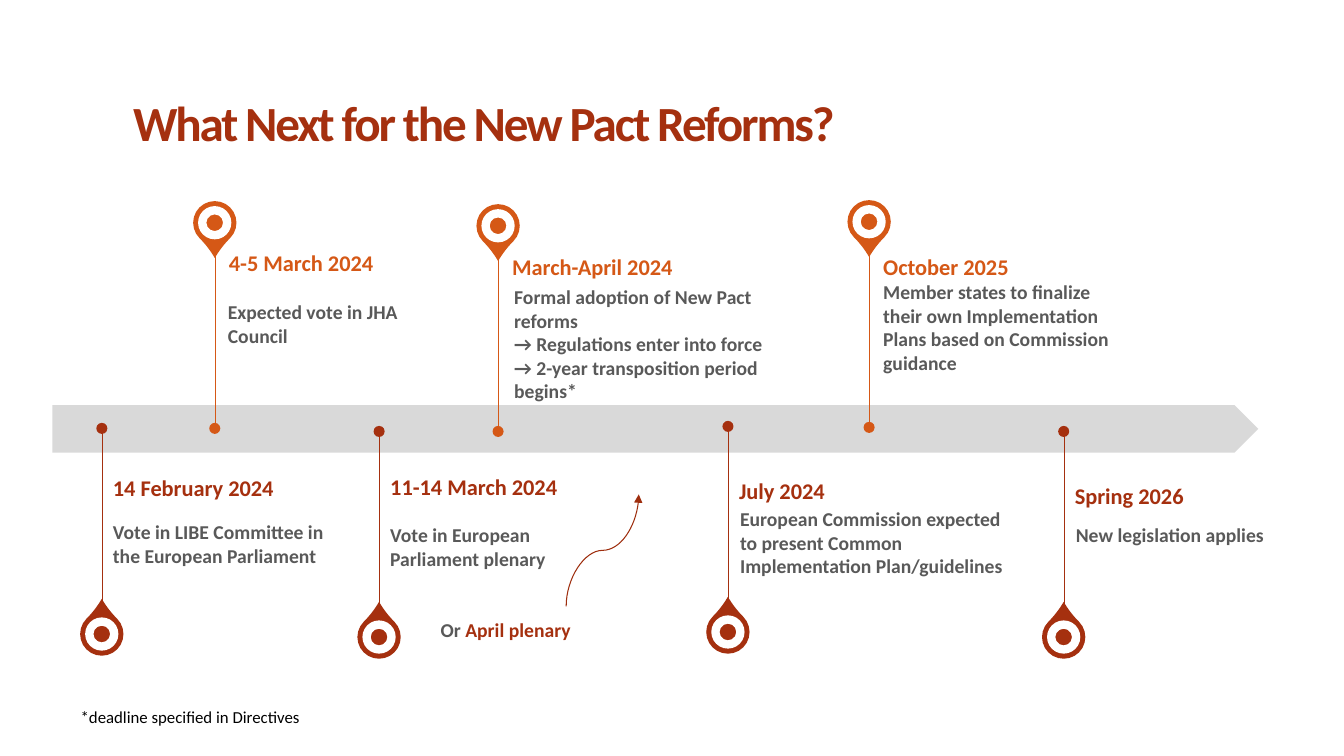
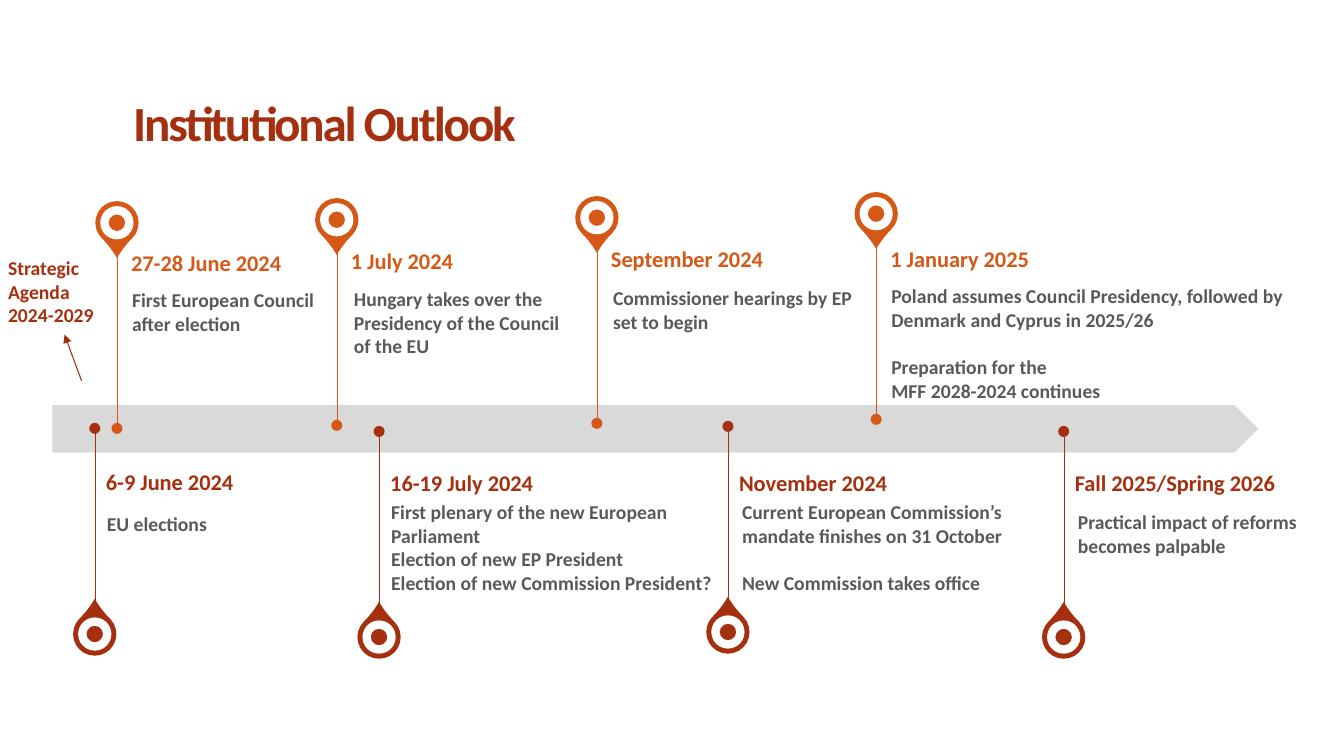
from lxml.etree import SubElement
from pptx import Presentation
from pptx.dml.color import RGBColor
from pptx.enum.shapes import MSO_CONNECTOR, MSO_SHAPE
from pptx.enum.text import MSO_ANCHOR, MSO_AUTO_SIZE, PP_ALIGN
from pptx.oxml.ns import qn
from pptx.util import Emu, Pt

PX = 9144
FONT = "Calibri"
COLOURS = {
    "rust": "A5300F",
    "orange": "D55816",
    "arrow": "9E2E0E",
    "band": "D9D9D9",
    "body": "595959",
    "white": "FFFFFF",
    "black": "000000",
}
TITLE_BOX = (122, 96, 832, 87)
BAND_BOX = (52, 402, 1196, 47)
STEM = 174
HEAD_DISTANCE = 204
HEAD, RING, DOT = 43, 33, 11
DATE_SIZE, BODY_SIZE = 16, 14
BLOCK_GAP = 17
SIDES = {
    "above": {"colour": "orange", "direction": -1, "rotation": 135, "date_offset": 14},
    "below": {"colour": "rust", "direction": 1, "rotation": 315, "date_offset": 11},
}

# side, stem x, dot y, date, date y, body box, blocks of paragraphs
SLIDES = [
    {
        "title": "What Next for the New Pact Reforms?",
        "events": [
            ("above", 213, 425, "4-5 March 2024", 247, (226, 298, 222, 47),
             [["Expected vote in JHA Council"]]),
            ("above", 494, 428, "March-April 2024", 251, (510, 283, 259, 141),
             [["Formal adoption of New Pact reforms",
               "→ Regulations enter into force",
               "→ 2-year transposition period begins*"]]),
            ("above", 862, 424, "October 2025", 251, (876, 278, 243, 94),
             [["Member states to finalize their own Implementation Plans "
               "based on Commission guidance"]]),
            ("below", 376, 428, "11-14 March 2024", 469, (387, 519, 222, 47),
             [["Vote in European Parliament plenary"]]),
            ("below", 722, 423, "July 2024", 473, (734, 503, 262, 71),
             [["European Commission expected to present Common "
               "Implementation Plan/guidelines"]]),
            ("below", 101, 425, "14 February 2024", 470, (112, 516, 222, 47),
             [["Vote in LIBE Committee in the European Parliament"]]),
            ("below", 1055, 428, "Spring 2026", 478, (1067, 519, 222, 24),
             [["New legislation applies"]]),
        ],
        "remarks": [
            ((437, 613, 172, 24), 14, True, [("Or ", "body"), ("April plenary", "rust")]),
            ((80, 701, 240, 20), 12, False, [("*deadline specified in Directives", "black")]),
        ],
        "arrow": (MSO_CONNECTOR.CURVE, (653, 582), (542, 510), 90),
    },
    {
        "title": "Institutional Outlook",
        "events": [
            ("above", 116, 425, "27-28 June 2024", 247, (131, 286, 222, 47),
             [["First European Council after election"]]),
            ("above", 592, 420, "September 2024", 243, (608, 284, 259, 47),
             [["Commissioner hearings by EP set to begin"]]),
            ("above", 869, 416, "1 January 2025", 243, (884, 282, 418, 118),
             [["Poland assumes Council Presidency, followed by Denmark "
               "and Cyprus in 2025/26"],
              ["Preparation for the", "MFF 2028-2024 continues"]]),
            ("below", 376, 428, "16-19 July 2024", 465, (388, 496, 332, 94),
             [["First plenary of the new European Parliament",
               "Election of new EP President",
               "Election of new Commission President?"]]),
            ("below", 722, 423, "November 2024", 465, (736, 496, 278, 94),
             [["Current European Commission’s mandate finishes on 31 October"],
              ["New Commission takes office"]]),
            ("below", 94, 425, "6-9 June 2024", 464, (106, 508, 222, 24),
             [["EU elections"]]),
            ("below", 1055, 428, "Fall 2025/Spring 2026", 465, (1069, 506, 222, 47),
             [["Practical impact of reforms becomes palpable"]]),
            ("above", 334, 422, "1 July 2024", 245, (351, 285, 259, 71),
             [["Hungary takes over the Presidency of the Council", "of the EU"]]),
        ],
        "remarks": [
            ((8, 254, 109, 71), 14, True, [("Strategic Agenda 2024-2029", "rust")]),
        ],
        "arrow": (MSO_CONNECTOR.STRAIGHT, (81, 378), (64, 332), 0),
    },
]


def emu(lengths):
    return [Emu(round(length * PX)) for length in lengths]


def rgb(name):
    return RGBColor.from_string(COLOURS[name])


def add_run(paragraph, words, size, colour, bold=True):
    run = paragraph.add_run()
    run.text = words
    run.font.name = FONT
    run.font.size = Pt(size)
    run.font.bold = bold
    run.font.color.rgb = rgb(colour)
    return run


def add_text(shapes, box, blocks, size, bold=True):
    frame = shapes.add_textbox(*emu(box)).text_frame
    frame.word_wrap = True
    frame.margin_left = frame.margin_right = frame.margin_top = frame.margin_bottom = 0
    paragraph = None
    for block in blocks:
        for position, runs in enumerate(block):
            if paragraph is None:
                paragraph = frame.paragraphs[0]
            else:
                paragraph = frame.add_paragraph()
                if position == 0:
                    paragraph.space_before = Pt(BLOCK_GAP)
            for words, colour in runs:
                add_run(paragraph, words, size, colour, bold)


def add_filled(shapes, preset, box, colour):
    shape = shapes.add_shape(preset, *emu(box))
    shape.shadow.inherit = False
    shape.fill.solid()
    shape.fill.fore_color.rgb = rgb(colour)
    shape.line.fill.background()
    return shape


def add_centred(shapes, preset, x, y, size, colour):
    return add_filled(shapes, preset, (x - size / 2, y - size / 2, size, size), colour)


def add_line(shapes, kind, begin, end, colour, width, rotation=0, arrowhead=False):
    line = shapes.add_connector(kind, *emu(begin + end))
    line.line.color.rgb = rgb(colour)
    line.line.width = Pt(width)
    properties = line._element.spPr
    if rotation:
        properties.find(qn("a:xfrm")).set("rot", str(rotation * 60000))
    if arrowhead:
        SubElement(properties.find(qn("a:ln")), qn("a:tailEnd"), type="triangle")
    SubElement(properties, qn("a:effectLst"))


def add_title(slide, words):
    title = slide.shapes.title
    title.left, title.top, title.width, title.height = emu(TITLE_BOX)
    frame = title.text_frame
    frame.auto_size = MSO_AUTO_SIZE.NONE
    frame.vertical_anchor = MSO_ANCHOR.TOP
    paragraph = frame.paragraphs[0]
    paragraph.alignment = PP_ALIGN.LEFT
    paragraph.line_spacing = 0.85
    run = add_run(paragraph, words, 35.1, "rust")
    run.font._element.set("spc", "-150")


def add_event(slide, side, x, dot_y, date, date_y, body_box, blocks):
    style = SIDES[side]
    colour, direction = style["colour"], style["direction"]
    shapes = slide.shapes.add_group_shape().shapes
    add_line(shapes, MSO_CONNECTOR.STRAIGHT, (x, dot_y),
             (x, dot_y + direction * STEM), colour, 0.25)
    head_y = dot_y + direction * HEAD_DISTANCE
    head = add_centred(shapes, MSO_SHAPE.TEAR, x, head_y, HEAD, colour)
    head.adjustments[0] = 1.15
    head.rotation = style["rotation"]
    add_centred(shapes, MSO_SHAPE.DONUT, x, head_y, RING, "white")
    add_centred(shapes, MSO_SHAPE.OVAL, x, dot_y, DOT, colour)
    body = [[[(words, "body")] for words in block] for block in blocks]
    add_text(shapes, body_box, body, BODY_SIZE)
    date_box = (x + style["date_offset"], date_y, 222, 27)
    add_text(shapes, date_box, [[[(date, colour)]]], DATE_SIZE)


def build_slide(deck, content):
    slide = deck.slides.add_slide(deck.slide_layouts[5])
    add_title(slide, content["title"])
    add_filled(slide.shapes, MSO_SHAPE.PENTAGON, BAND_BOX, "band")
    for event in content["events"]:
        add_event(slide, *event)
    for box, size, bold, runs in content["remarks"]:
        add_text(slide.shapes, box, [[runs]], size, bold)
    kind, begin, end, rotation = content["arrow"]
    add_line(slide.shapes, kind, begin, end, "arrow", 0.75, rotation, arrowhead=True)


def main():
    deck = Presentation()
    deck.slide_width, deck.slide_height = emu((1333, 750))
    for content in SLIDES:
        build_slide(deck, content)
    deck.save("out.pptx")


if __name__ == "__main__":
    main()
